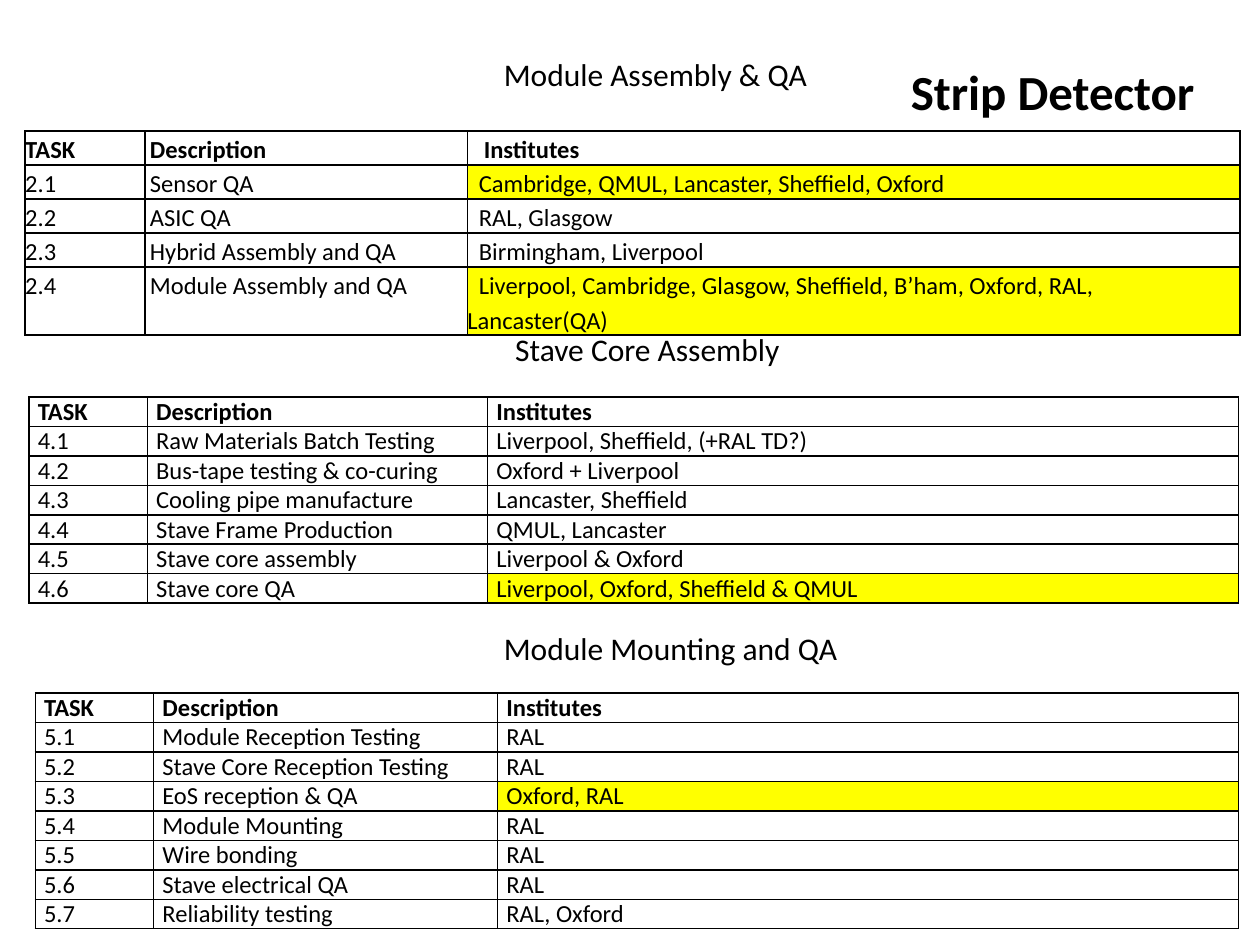
from lxml import etree
from pptx import Presentation
from pptx.dml.color import RGBColor
from pptx.enum.text import MSO_AUTO_SIZE
from pptx.oxml.ns import qn
from pptx.util import Inches, Pt

FIT_SHAPE = MSO_AUTO_SIZE.SHAPE_TO_FIT_TEXT
HEADER = ("TASK", "Description", "Institutes")


def colour(hex_string):
    return RGBColor.from_string(hex_string)


class TaskSlide:
    FONT = "Calibri"
    INK = "000000"
    HIGHLIGHT = "FFFF00"
    TABLE_SIZE = 14
    BORDER = 1

    def __init__(self, slide):
        self.slide = slide

    def style(self, paragraph, size, bold=False):
        paragraph.font.name = self.FONT
        paragraph.font.size = Pt(size)
        paragraph.font.bold = bold
        paragraph.font.color.rgb = colour(self.INK)

    def heading(self, text, left, top, width, height=0.4, size=18, bold=False):
        box = self.slide.shapes.add_textbox(
            Inches(left), Inches(top), Inches(width), Inches(height))
        frame = box.text_frame
        frame.word_wrap = False
        frame.auto_size = FIT_SHAPE
        frame.text = text
        self.style(frame.paragraphs[0], size, bold)

    def border(self, cell):
        properties = cell._tc.get_or_add_tcPr()
        for side in ("a:lnL", "a:lnR", "a:lnT", "a:lnB"):
            line = etree.SubElement(properties, qn(side), w=str(Pt(self.BORDER)))
            fill = etree.SubElement(line, qn("a:solidFill"))
            etree.SubElement(fill, qn("a:srgbClr"), val=self.INK)

    def cell(self, cell, text, bold, highlighted, margin, indent, spacing):
        cell.margin_left = cell.margin_right = Inches(margin)
        cell.margin_top = cell.margin_bottom = 0
        cell.text = text
        paragraph = cell.text_frame.paragraphs[0]
        self.style(paragraph, self.TABLE_SIZE, bold)
        if spacing:
            paragraph.line_spacing = spacing
        if indent:
            paragraph._p.get_or_add_pPr().set("indent", str(Inches(indent)))
        self.border(cell)
        if highlighted:
            cell.fill.solid()
            cell.fill.fore_color.rgb = colour(self.HIGHLIGHT)
        else:
            cell.fill.background()

    def table(self, left, top, widths, heights, group, tasks, highlights,
              margin=0.07, indents=(0, 0, 0), header_indent=0, spacing=None):
        """Tasks are numbered group.1, group.2, ...; highlights lists the marked ones."""
        rows = [HEADER] + [(f"{group}.{number}", *task)
                           for number, task in enumerate(tasks, 1)]
        table = self.slide.shapes.add_table(
            len(rows), len(widths), Inches(left), Inches(top),
            Inches(sum(widths)), Inches(sum(heights))).table
        table.first_row = table.horz_banding = False
        for column, width in zip(table.columns, widths):
            column.width = Inches(width)
        for r, (texts, height) in enumerate(zip(rows, heights)):
            table.rows[r].height = Inches(height)
            for c, text in enumerate(texts):
                institutes = c == len(widths) - 1
                indent = indents[c]
                if r == 0 and institutes:
                    indent += header_indent
                self.cell(table.cell(r, c), text, r == 0,
                          institutes and r in highlights, margin, indent, spacing)


def main():
    deck = Presentation()
    deck.slide_width, deck.slide_height = Inches(10), Inches(7.5)
    page = TaskSlide(deck.slides.add_slide(deck.slide_layouts[6]))

    # Title
    page.heading("Strip Detector", 7.13, 0.44, 2.59, 0.57, size=28, bold=True)

    # Module assembly
    assembly = [
        ("Sensor QA", "Cambridge, QMUL, Lancaster, Sheffield, Oxford"),
        ("ASIC QA", "RAL, Glasgow"),
        ("Hybrid Assembly and QA", "Birmingham, Liverpool"),
        ("Module Assembly and QA",
         "Liverpool, Cambridge, Glasgow, Sheffield, B’ham, Oxford, RAL, Lancaster(QA)"),
    ]
    page.table(0.2, 1.04, (0.95, 2.56, 6.13), [0.27] * 4 + [0.54], 2, assembly, {1, 4},
               margin=0, indents=(0, 0.04, 0.09), header_indent=0.04, spacing=1.15)

    # Stave core
    stave_core = [
        ("Raw Materials Batch Testing", "Liverpool, Sheffield, (+RAL TD?)"),
        ("Bus-tape testing & co-curing", "Oxford + Liverpool"),
        ("Cooling pipe manufacture", "Lancaster, Sheffield"),
        ("Stave Frame Production", "QMUL, Lancaster"),
        ("Stave core assembly", "Liverpool & Oxford"),
        ("Stave core QA", "Liverpool, Oxford, Sheffield & QMUL"),
    ]
    page.table(0.23, 3.15, (0.94, 2.7, 5.96), [0.23] * 7, 4, stave_core, {6})

    # Module mounting
    mounting = [
        ("Module Reception Testing", "RAL"),
        ("Stave Core Reception Testing", "RAL"),
        ("EoS reception & QA", "Oxford, RAL"),
        ("Module Mounting", "RAL"),
        ("Wire bonding", "RAL"),
        ("Stave electrical QA", "RAL"),
        ("Reliability testing", "RAL, Oxford"),
    ]
    page.table(0.28, 5.5, (0.94, 2.73, 5.88), [0.23] * 8, 5, mounting, {3})

    # Table headings
    page.heading("Module Assembly & QA", 3.9, 0.39, 2.7)
    page.heading("Stave Core Assembly", 3.99, 2.57, 2.42)
    page.heading("Module Mounting and QA", 3.9, 4.94, 2.96)

    deck.save("out.pptx")


if __name__ == "__main__":
    main()
